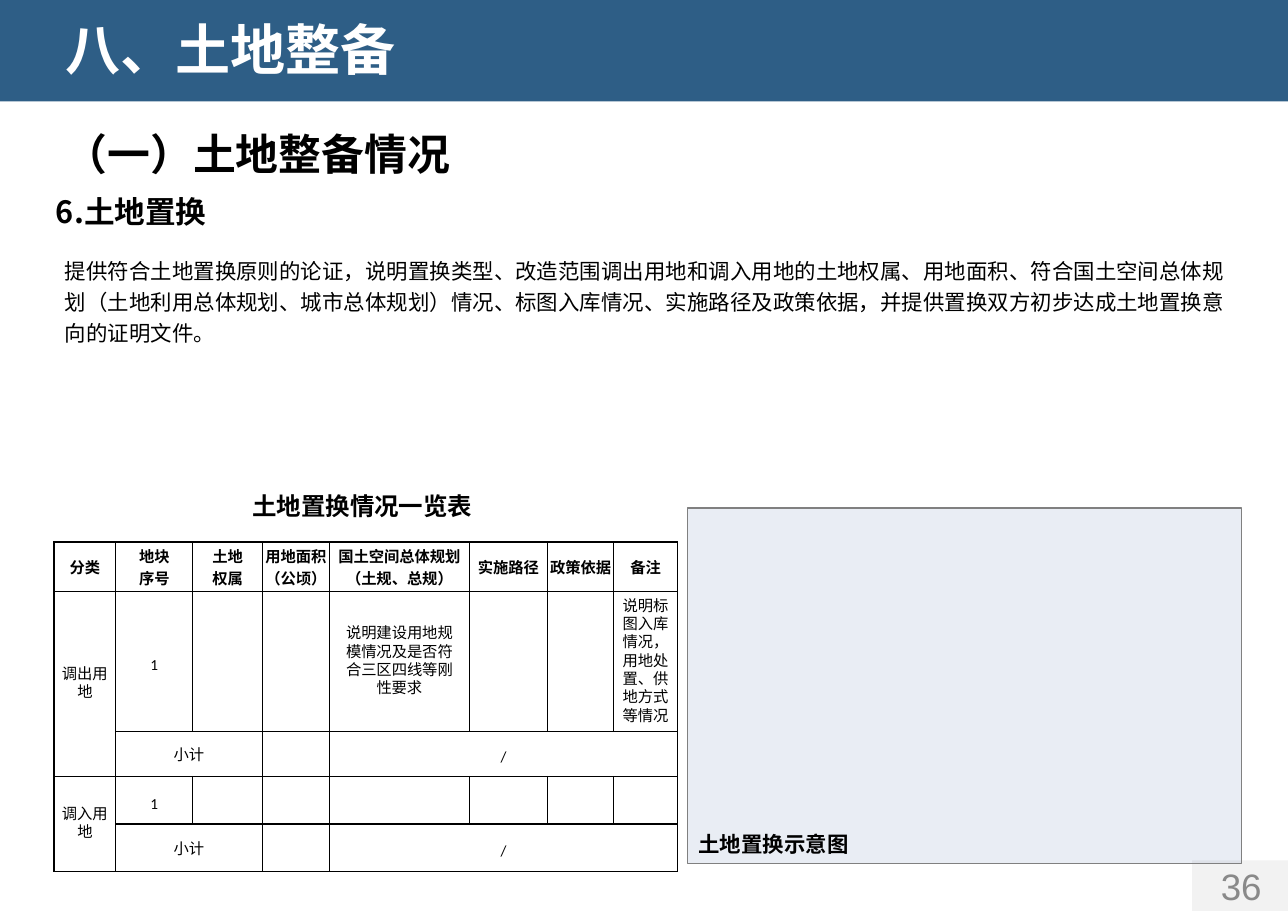
from dataclasses import dataclass

from lxml.etree import SubElement
from pptx import Presentation
from pptx.dml.color import RGBColor
from pptx.enum.shapes import MSO_SHAPE
from pptx.enum.text import MSO_ANCHOR, MSO_AUTO_SIZE, PP_ALIGN
from pptx.oxml.ns import qn
from pptx.util import Inches, Pt


@dataclass(frozen=True)
class Theme:
    band: str = "2E5E86"
    panel: str = "2F5597"
    gray: str = "808080"
    page: str = "898989"
    ink: str = "000000"
    white: str = "FFFFFF"
    sans: str = "Arial"
    cjk: str = "Noto Sans CJK SC"
    grid: str = "Calibri"
    title: int = 36
    head: int = 28
    number: int = 24
    sub: int = 20
    label: int = 16
    body: int = 14
    cell: int = 10


def color(code):
    return RGBColor.from_string(code)


class Deck:
    def __init__(self, theme):
        self.theme = theme
        self.file = Presentation()
        self.file.slide_width = Inches(11.69)
        self.file.slide_height = Inches(8.27)
        self.slide = self.file.slides.add_slide(self.file.slide_layouts[5])

    def style(self, frame, text, size, face, ink=None, bold=False,
              align=PP_ALIGN.LEFT, lead=None):
        frame.text = text
        for para in frame.paragraphs:
            para.alignment = align
            if lead:
                para.line_spacing = lead
            font = para.font
            font.size, font.name, font.bold = Pt(size), face, bold
            font.color.rgb = color(ink or self.theme.ink)

    def rect(self, box, fill, alpha=None, line=None):
        shape = self.slide.shapes.add_shape(
            MSO_SHAPE.RECTANGLE, *map(Inches, box))
        shape.shadow.inherit = False
        shape.fill.solid()
        shape.fill.fore_color.rgb = color(fill)
        if alpha:
            tint = shape.element.spPr.find(".//" + qn("a:srgbClr"))
            SubElement(tint, qn("a:alpha"), val=str(alpha * 1000))
        if line:
            shape.line.color.rgb = color(line)
            shape.line.width = Pt(1)
        else:
            shape.line.fill.background()

    def text(self, box, text, size, face, anchor=MSO_ANCHOR.TOP, **look):
        shape = self.slide.shapes.add_textbox(*map(Inches, box))
        frame = shape.text_frame
        frame.word_wrap = True
        frame.vertical_anchor = anchor
        self.style(frame, text, size, face, **look)

    def title(self, box, text):
        shape = self.slide.shapes.title
        shape.left, shape.top, shape.width, shape.height = map(Inches, box)
        frame = shape.text_frame
        frame.auto_size = MSO_AUTO_SIZE.NONE
        frame.vertical_anchor = MSO_ANCHOR.TOP
        self.style(frame, text, self.theme.title, self.theme.sans,
                   ink=self.theme.white, bold=True)
        # Bring the title in front of the band
        shape.element.getparent().append(shape.element)

    def table(self, box, cols, rows):
        frame = self.slide.shapes.add_table(
            len(rows), len(cols), *map(Inches, box))
        table = frame.table
        table.first_row = table.horz_banding = False
        for col, width in zip(table.columns, cols):
            col.width = Inches(width)
        for row, height in zip(table.rows, rows):
            row.height = Inches(height)
        for cell in table.iter_cells():
            self.border(cell)
            cell.fill.background()
        return table

    def border(self, cell):
        props = cell._tc.get_or_add_tcPr()
        for side in ("lnL", "lnR", "lnT", "lnB"):
            line = SubElement(props, qn("a:" + side), w=str(Pt(1)))
            fill = SubElement(line, qn("a:solidFill"))
            SubElement(fill, qn("a:srgbClr"), val=self.theme.ink)

    def cell(self, cell, text, face, pad=(0.07, 0), bold=False, lead=None):
        cell.vertical_anchor = MSO_ANCHOR.MIDDLE
        cell.margin_left = cell.margin_right = Inches(pad[0])
        cell.margin_top = cell.margin_bottom = Inches(pad[1])
        self.style(cell.text_frame, text, self.theme.cell, face, bold=bold,
                   align=PP_ALIGN.CENTER, lead=lead)


def main():
    theme = Theme()
    deck = Deck(theme)
    middle, center = MSO_ANCHOR.MIDDLE, PP_ALIGN.CENTER

    # Page furniture and headings
    deck.rect((10.82, 7.81, 0.88, 0.48), theme.gray, alpha=10)
    deck.rect((0, 0, 11.69, 0.92), theme.band)
    deck.title((0.49, 0.09, 9.22, 0.71), "八、土地整备")
    deck.text((0.49, 1.11, 8.17, 0.57), "（一）土地整备情况", theme.head,
              theme.cjk, middle, bold=True)
    deck.text((0.41, 1.7, 8.17, 0.44), "6.土地置换", theme.sub,
              theme.cjk, middle, bold=True)

    # Requirements
    deck.text((0.49, 2.25, 10.78, 0.95),
              "提供符合土地置换原则的论证，说明置换类型、改造范围调出用地和调入用地的"
              "土地权属、用地面积、符合国土空间总体规划（土地利用总体规划、城市总体规划）"
              "情况、标图入库情况、实施路径及政策依据，并提供置换双方初步达成土地置换意向"
              "的证明文件。", theme.body, theme.sans, lead=1.2)

    # Diagram area
    deck.rect((6.24, 4.61, 5.03, 3.23), theme.panel, alpha=10,
              line=theme.gray)
    deck.text((6.24, 7.5, 5.03, 0.34), "土地置换示意图", theme.body,
              theme.sans, bold=True)

    # Table of swapped land
    deck.text((0.49, 4.28, 5.6, 0.5), "土地置换情况一览表", theme.label,
              theme.cjk, bold=True, align=center, lead=1.5)
    table = deck.table((0.49, 4.92, 5.67, 2.99),
                       (0.56, 0.7, 0.63, 0.61, 1.27, 0.71, 0.6, 0.58),
                       (0.45, 1.27, 0.41, 0.43, 0.43))
    heads = ("分类", "地块\n序号", "土地\n权属", "用地面积\n（公顷）",
             "国土空间总体规划（土规、总规）", "实施路径", "政策依据", "备注")
    for col, head in enumerate(heads):
        face = theme.grid if col < 5 else theme.sans
        deck.cell(table.cell(0, col), head, face, pad=(0, 0), bold=True)

    # Each group has one plot row and one subtotal row
    for row, group in ((1, "调出用地"), (3, "调入用地")):
        total = row + 1
        table.cell(row, 0).merge(table.cell(total, 0))
        table.cell(total, 1).merge(table.cell(total, 2))
        table.cell(total, 4).merge(table.cell(total, 7))
        deck.cell(table.cell(row, 0), group, theme.sans, lead=Pt(12))
        deck.cell(table.cell(row, 1), "1", theme.grid, lead=Pt(17))
        deck.cell(table.cell(total, 1), "小计", theme.grid)
        deck.cell(table.cell(total, 4), "/", theme.grid, lead=Pt(17))
    deck.cell(table.cell(1, 4),
              "说明建设用地规模情况及是否符合三区四线等刚性要求",
              theme.sans, pad=(0.1, 0.05), lead=Pt(12))
    deck.cell(table.cell(1, 7), "说明标图入库情况，用地处置、供地方式等情况",
              theme.sans, lead=Pt(12))

    # Page number
    deck.text((10.84, 7.81, 0.85, 0.46), "36", theme.number, theme.sans,
              middle, ink=theme.page, align=center)

    deck.file.save("out.pptx")


if __name__ == "__main__":
    main()
